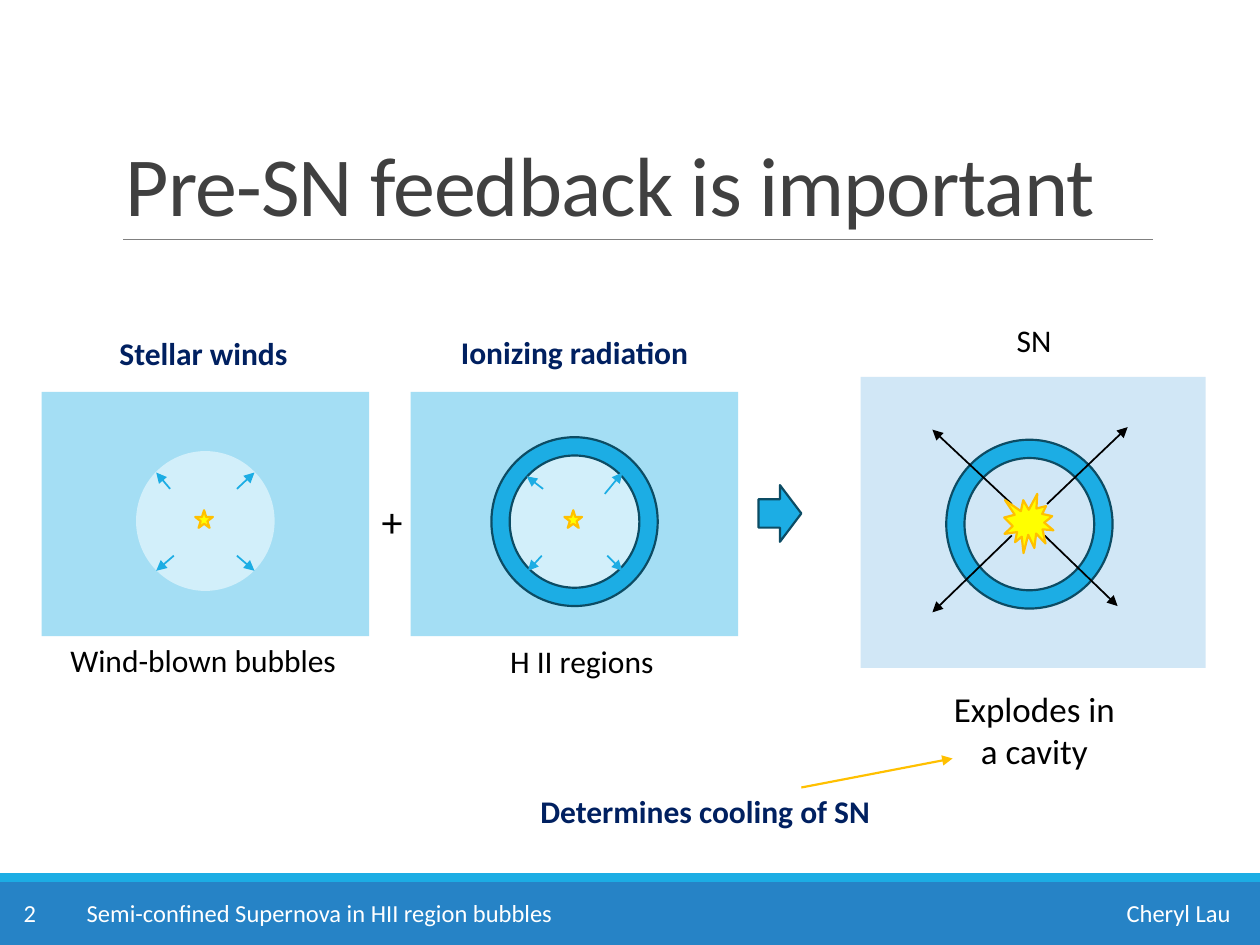
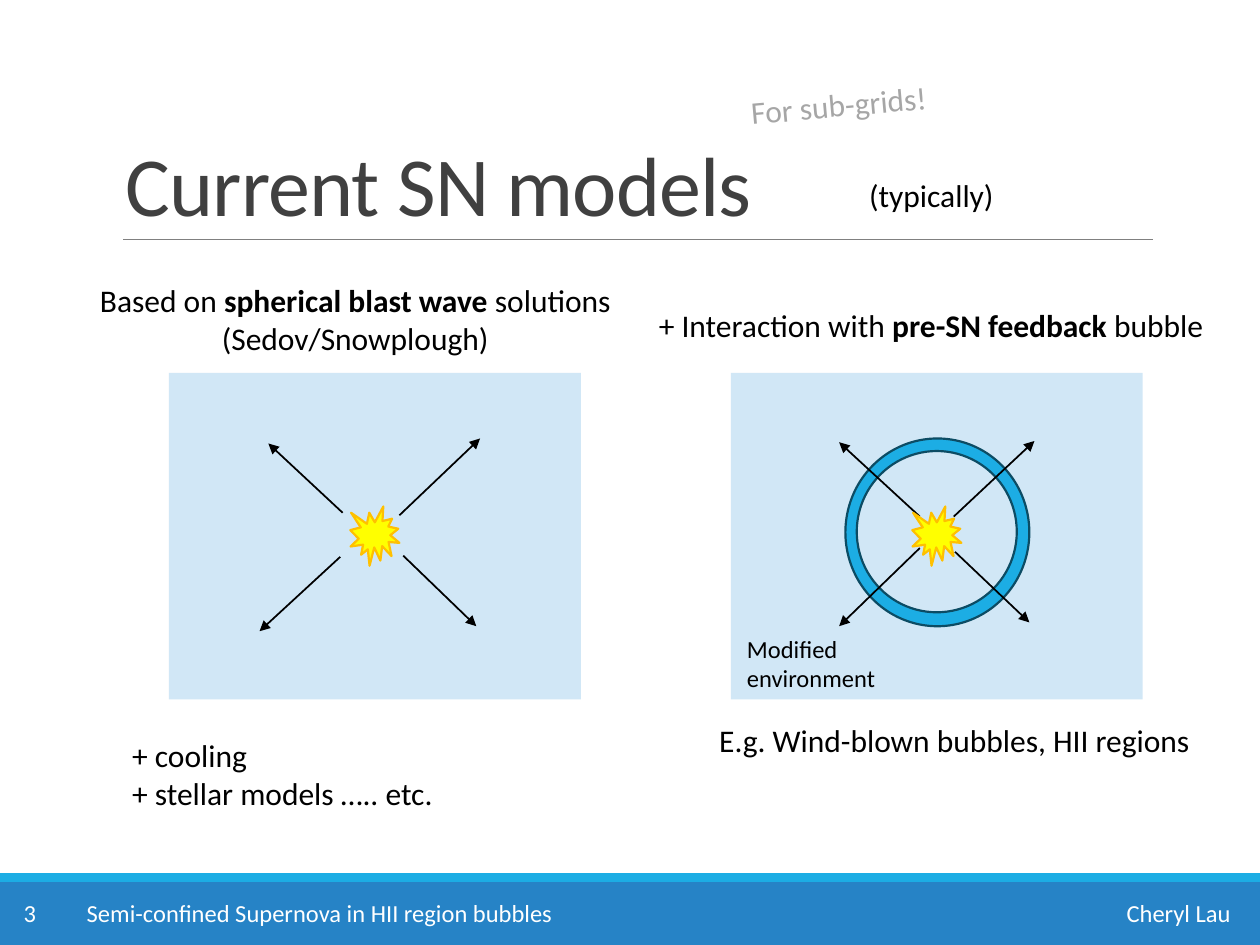
from lxml import etree
from pptx import Presentation
from pptx.dml.color import RGBColor
from pptx.enum.shapes import MSO_CONNECTOR, MSO_SHAPE
from pptx.enum.text import MSO_ANCHOR, PP_ALIGN
from pptx.oxml.ns import qn
from pptx.util import Inches, Pt

RECT, OVAL, RING = MSO_SHAPE.RECTANGLE, MSO_SHAPE.OVAL, MSO_SHAPE.DONUT
STAR, BURST = MSO_SHAPE.STAR_5_POINT, MSO_SHAPE.EXPLOSION1
ARROW = MSO_SHAPE.RIGHT_ARROW
STRAIGHT = MSO_CONNECTOR.STRAIGHT
LEFT, CENTER = PP_ALIGN.LEFT, PP_ALIGN.CENTER
TOP, BOTTOM = MSO_ANCHOR.TOP, MSO_ANCHOR.BOTTOM

FONT = "Calibri"
COLOR = {
    "band": "2683C6", "sky": "1CADE4", "edge": "0C4C64", "rule": "808080",
    "title": "404040", "navy": "002060", "black": "000000", "white": "FFFFFF",
    "gas": "A4DEF4", "bubble": "D2EFFA", "pale": "D1E7F6",
    "yellow": "FFFF00", "gold": "FFC000", "gray": "A6A6A6",
}
FOOTER = "Semi-confined Supernova in HII region bubbles"
AUTHOR = "Cheryl Lau"


def shape(slide, kind, box, fill, line=None):
    item = slide.shapes.add_shape(kind, *map(Inches, box))
    item.shadow.inherit = False
    item.fill.solid()
    item.fill.fore_color.rgb = RGBColor.from_string(COLOR[fill])
    if line:
        item.line.color.rgb = RGBColor.from_string(COLOR[line])
        item.line.width = Pt(1.25)
    else:
        item.line.fill.background()
    if kind == RING:
        item.adjustments[0] = 0.11


def text(slide, box, lines, size=18, color="black", bold=False, align=LEFT,
         wrap=False, anchor=TOP, tilt=0, track=0, space=None, tabs=()):
    """Each line is a list of runs; a run that starts with * is bold."""
    item = slide.shapes.add_textbox(*map(Inches, box))
    item.rotation = tilt
    frame = item.text_frame
    frame.word_wrap = wrap
    frame.vertical_anchor = anchor
    for n, runs in enumerate(lines):
        para = frame.paragraphs[0] if n == 0 else frame.add_paragraph()
        para.alignment = align
        para.line_spacing = space
        if tabs:
            stops = etree.SubElement(para._p.get_or_add_pPr(), qn("a:tabLst"))
            for place, side in tabs:
                etree.SubElement(stops, qn("a:tab"), pos=str(Inches(place)), algn=side)
        for words in runs:
            run = para.add_run()
            run.text = words.lstrip("*")
            font = run.font
            font.name, font.size = FONT, Pt(size)
            font.bold = bold or words.startswith("*")
            font.color.rgb = RGBColor.from_string(COLOR[color])
            if track:
                run._r.get_or_add_rPr().set("spc", str(track))


head = {"color": "navy", "bold": True}
flow = {"wrap": True}

# Bubble panels: wind on the left, radiation on the right
bubbles = []
for left in (0.33, 3.26):
    bubbles += [
        (RECT, (left, 3.11, 2.6, 1.94), "gas"),
        (OVAL, (left + 0.75, 3.58, 1.1, 1.11), "bubble"),
        (STAR, (left + 1.22, 4.05, 0.14, 0.14), "yellow", "gold"),
    ]

pages = [
    {
        "number": 2,
        "title": "Pre-SN feedback is important",
        "shapes": bubbles + [
            (RING, (3.9, 3.47, 1.32, 1.34), "sky", "edge"),
            (ARROW, (6.02, 3.85, 0.34, 0.45), "sky", "edge"),
            (RECT, (6.83, 2.99, 2.74, 2.31), "pale"),
            (RING, (7.51, 3.49, 1.32, 1.34), "sky", "edge"),
        ],
        "arrows": [
            ("sky", 1, [
                (1.35, 3.88, 1.24, 3.75), (1.88, 3.88, 2.02, 3.75),
                (1.88, 4.41, 2.02, 4.53), (1.38, 4.41, 1.24, 4.53),
                (4.31, 3.88, 4.18, 3.78), (4.8, 3.92, 4.94, 3.75),
                (4.82, 4.41, 4.94, 4.53), (4.3, 4.41, 4.19, 4.53),
            ]),
            ("black", 1, [
                (8.31, 4, 8.95, 3.39), (8.29, 4.25, 8.87, 4.81),
                (8.03, 4, 7.4, 3.41), (8.03, 4.25, 7.4, 4.86),
            ]),
            ("gold", 1.25, [(6.36, 6.25, 7.56, 6.02)]),
        ],
        "bursts": [(7.97, 3.92)],
        "texts": [
            ((0.85, 2.6, 1.57, 0.4), [["Stellar winds"]], head),
            ((3.56, 2.59, 2.02, 0.4), [["Ionizing radiation"]], head),
            ((7.97, 2.5, 0.48, 0.4), [["SN"]], {}),
            ((2.93, 3.88, 0.37, 0.5), [["+"]], {"size": 24}),
            ((0.46, 5.04, 2.34, 0.4), [["Wind-blown bubbles"]], {}),
            ((3.95, 5.05, 1.35, 0.4), [["H II regions"]], {}),
            ((7.41, 5.41, 1.6, 0.77), [["Explodes in a cavity"]],
             {"size": 20, "align": CENTER, **flow}),
            ((4.19, 6.24, 2.84, 0.4), [["Determines cooling of SN"]], head),
        ],
    },
    {
        "number": 3,
        "title": "Current SN models",
        "shapes": [
            (RECT, (1.34, 2.96, 3.27, 2.59), "pale"),
            (RECT, (5.8, 2.96, 3.27, 2.59), "pale"),
            (OVAL, (6.71, 3.48, 1.46, 1.49), "sky", "edge"),
            (OVAL, (6.8, 3.58, 1.27, 1.28), "pale", "edge"),
        ],
        "arrows": [
            ("black", 1, [
                (2.72, 4.07, 2.13, 3.52), (3.17, 4.09, 3.81, 3.48),
                (3.2, 4.41, 3.78, 4.97), (2.7, 4.42, 2.06, 5.01),
                (7.3, 4.1, 6.66, 3.51), (7.57, 4.1, 8.21, 3.5),
                (7.58, 4.38, 8.17, 4.94), (7.3, 4.35, 6.66, 4.97),
            ]),
        ],
        "bursts": [(2.78, 4.02), (7.24, 4.02)],
        "texts": [
            ((5.86, 0.63, 1.61, 0.4), [["For sub-grids!"]],
             {"color": "gray", "tilt": -5}),
            ((6.8, 1.35, 1.2, 0.4), [["(typically)"]], {}),
            ((0.64, 2.18, 4.36, 0.72),
             [["Based on ", "*spherical blast wave ", "solutions (Sedov/Snowplough)"]],
             {"align": CENTER, **flow}),
            ((5.13, 2.38, 4.62, 0.4),
             [["+ Interaction with ", "*pre-SN feedback ", "bubble"]], flow),
            ((5.83, 4.98, 1.27, 0.57), [["Modified environment"]],
             {"size": 14, **flow}),
            ((5.61, 5.67, 4.04, 0.4), [["E.g. Wind-blown bubbles, HII regions"]], {}),
            ((0.95, 5.79, 3.48, 0.71),
             [["+ cooling"], ["+ stellar models ….. etc."]], flow),
        ],
    },
]

deck = Presentation()
deck.slide_width, deck.slide_height = Inches(10), Inches(7.5)

for page in pages:
    slide = deck.slides.add_slide(deck.slide_layouts[6])
    shape(slide, RECT, (0, 7, 10, 0.5), "band")
    shape(slide, RECT, (0, 6.93, 10, 0.07), "sky")
    text(slide, (0.9, 0.31, 8.25, 1.59), [[page["title"]]], size=48, color="title",
         wrap=True, anchor=BOTTOM, track=-50, space=0.85)

    for item in page["shapes"]:
        shape(slide, *item)

    rule = ("rule", 0.5, [(0.98, 1.9, 9.15, 1.9)])
    for color, width, paths in [rule] + page["arrows"]:
        for ends in paths:
            line = slide.shapes.add_connector(STRAIGHT, *map(Inches, ends))
            line.line.color.rgb = RGBColor.from_string(COLOR[color])
            line.line.width = Pt(width)
            if color != "rule":
                etree.SubElement(line.line._get_or_add_ln(), qn("a:tailEnd"),
                                 type="triangle")
            etree.SubElement(line._element.spPr, qn("a:effectLst"))

    for left, top in page["bursts"]:
        shape(slide, BURST, (left, top, 0.39, 0.47), "yellow", "gold")

    for box, lines, style in page["texts"]:
        text(slide, box, lines, **style)

    text(slide, (0.09, 7.08, 9.84, 0.34), [[f"{page['number']}\t{FOOTER}\t{AUTHOR}"]],
         size=14, color="white", wrap=True, tabs=[(0.5, "l"), (9.58, "r")])

deck.save("out.pptx")
